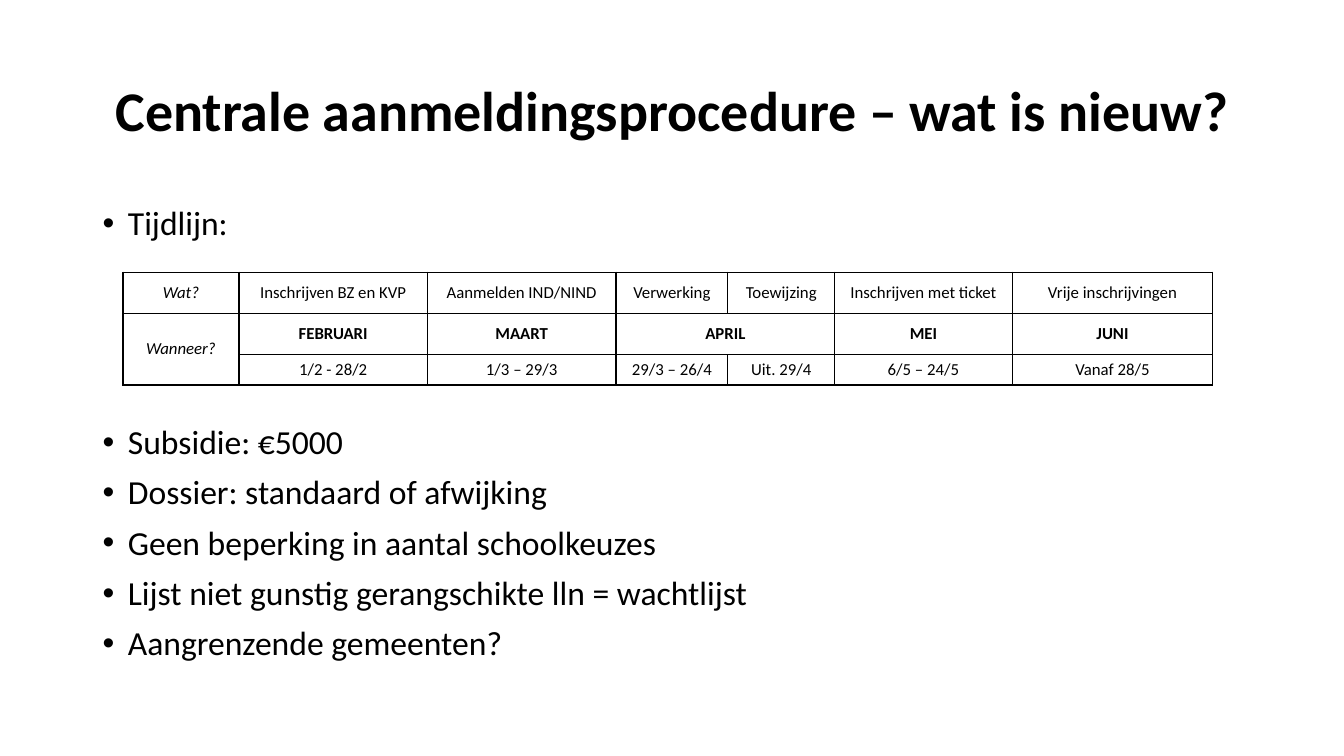
import pptx
import pptx.util
import pptx.dml.color
import pptx.enum.text
import pptx.oxml.ns
import lxml.etree

Inch, Pt = pptx.util.Inches, pptx.util.Pt
Align, Anchor = pptx.enum.text.PP_ALIGN, pptx.enum.text.MSO_ANCHOR
WIDE, HIGH = 13.33, 7.5
INK, PAPER = "000000", "FFFFFF"

TITLE = "Centrale aanmeldingsprocedure – wat is nieuw?"
POINTS = [
    "Tijdlijn:",
    "Subsidie: €5000",
    "Dossier: standaard of afwijking",
    "Geen beperking in aantal schoolkeuzes",
    "Lijst niet gunstig gerangschikte lln = wachtlijst",
    "Aangrenzende gemeenten?",
]
GAP = 130.5  # space above the second point, where the table sits
COLS = [1.15, 1.87, 1.87, 1.11, 1.06, 1.76, 1.99]
ROWS = [0.41, 0.41, 0.3]
CELLS = [
    ["Wat?", "Inschrijven BZ en KVP", "Aanmelden IND/NIND", "Verwerking",
     "Toewijzing", "Inschrijven met ticket", "Vrije inschrijvingen"],
    ["Wanneer?", "FEBRUARI", "MAART", "APRIL", "", "MEI", "JUNI"],
    ["", "1/2 - 28/2", "1/3 – 29/3", "29/3 – 26/4", "Uit. 29/4",
     "6/5 – 24/5", "Vanaf 28/5"],
]


def color(code):
    return pptx.dml.color.RGBColor.from_string(code)


def node(up, tag, **attrs):
    return lxml.etree.SubElement(up, pptx.oxml.ns.qn(tag), attrs)


def write(para, text, size=12, bold=False, slant=False, align=Align.CENTER,
          line=1.0, above=0):
    para.alignment, para.line_spacing = align, line
    para.space_before = Pt(above)
    run = para.add_run()
    run.text = text
    font = run.font
    font.name, font.size, font.bold, font.italic = "Calibri", Pt(size), bold, slant
    font.color.rgb = color(INK)


def frame(slide, box, anchor):
    text = slide.shapes.add_textbox(*map(Inch, box)).text_frame
    text.word_wrap, text.vertical_anchor = True, anchor
    return text


def bullet(para):
    props = para._p.get_or_add_pPr()
    props.set("marL", str(Inch(0.25)))
    props.set("indent", str(-Inch(0.25)))
    node(props, "a:buFont", typeface="Arial")
    node(props, "a:buChar", char="•")


def border(cell):
    props = cell._tc.get_or_add_tcPr()
    for side in ("L", "R", "T", "B"):
        edge = node(props, "a:ln" + side, w=str(Pt(1)))
        node(node(edge, "a:solidFill"), "a:srgbClr", val=INK)


# Title
def head(slide, box):
    text = frame(slide, box, Anchor.MIDDLE)
    write(text.paragraphs[0], TITLE, size=40, bold=True, line=0.9)


# Bullet list
def body(slide, box):
    text = frame(slide, box, Anchor.TOP)
    for num, point in enumerate(POINTS):
        para = text.add_paragraph() if num else text.paragraphs[0]
        write(para, point, size=24, align=Align.LEFT, line=0.9,
              above=GAP if num == 1 else 10)
        bullet(para)


# Timeline table
def times(slide, left, top):
    box = map(Inch, (left, top, sum(COLS), sum(ROWS)))
    grid = slide.shapes.add_table(len(ROWS), len(COLS), *box).table
    grid.first_row = grid.horz_banding = False
    for col, width in zip(grid.columns, COLS):
        col.width = Inch(width)
    for row, height in zip(grid.rows, ROWS):
        row.height = Inch(height)
    grid.cell(1, 0).merge(grid.cell(2, 0))
    grid.cell(1, 3).merge(grid.cell(1, 4))
    for r, words in enumerate(CELLS):
        for c, word in enumerate(words):
            cell = grid.cell(r, c)
            border(cell)
            cell.fill.solid()
            cell.fill.fore_color.rgb = color(PAPER)
            cell.vertical_anchor = Anchor.MIDDLE
            if word:
                write(cell.text_frame.paragraphs[0], word,
                      bold=r == 1 and c > 0, slant=c == 0)


def main():
    deck = pptx.Presentation()
    deck.slide_width, deck.slide_height = Inch(WIDE), Inch(HIGH)
    slide = deck.slides.add_slide(deck.slide_layouts[6])
    side = 0.92
    width = WIDE - 2 * side
    head(slide, (side, 0.4, width, 1.45))
    body(slide, (side, 2, width, 4.76))
    times(slide, side + 0.3, 2.7)
    deck.save("out.pptx")


if __name__ == "__main__":
    main()
